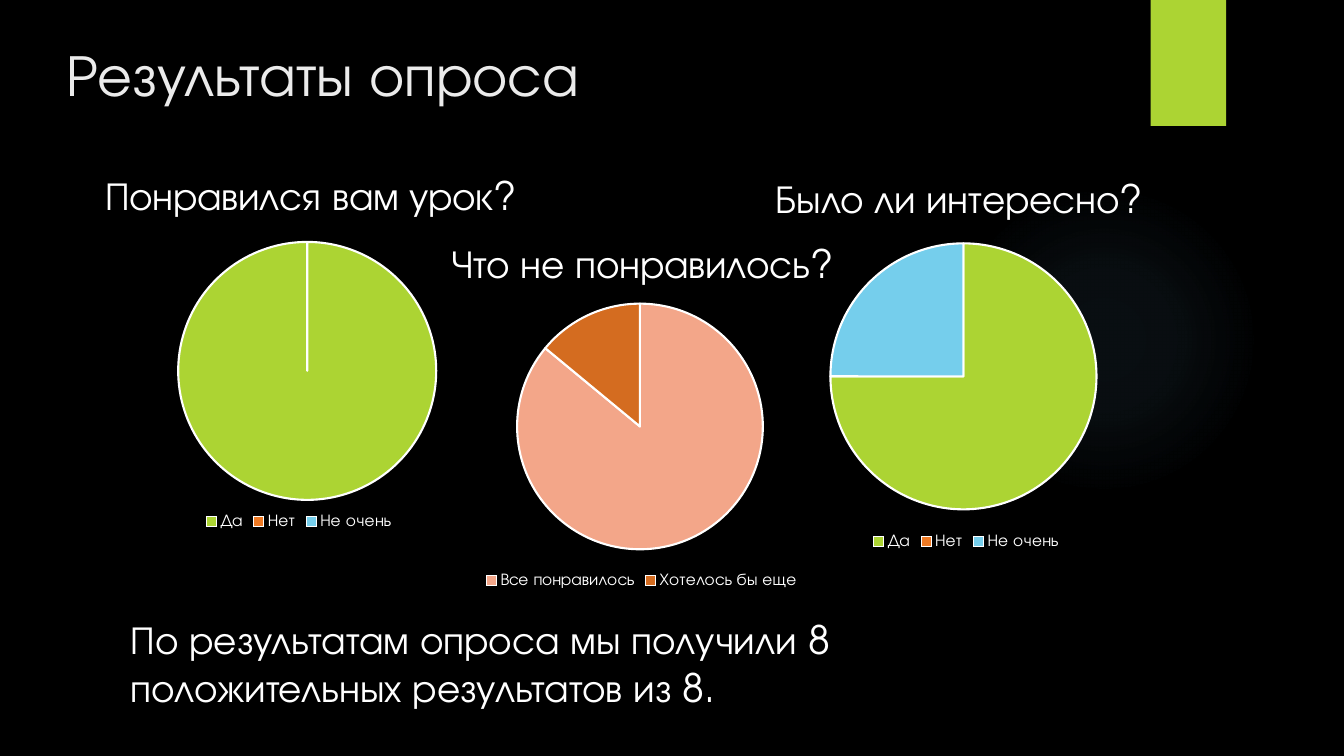
from dataclasses import dataclass

from lxml import etree
from pptx import Presentation
from pptx.chart.data import CategoryChartData
from pptx.dml.color import RGBColor
from pptx.enum.chart import XL_CHART_TYPE, XL_LEGEND_POSITION
from pptx.enum.shapes import MSO_SHAPE
from pptx.oxml import parse_xml
from pptx.oxml.ns import nsdecls, qn
from pptx.util import Inches, Pt

PIE = XL_CHART_TYPE.PIE
BOTTOM = XL_LEGEND_POSITION.BOTTOM
OVAL, RECTANGLE = MSO_SHAPE.OVAL, MSO_SHAPE.RECTANGLE

WIDTH, HEIGHT = Inches(13.33), Inches(7.5)
FONT = "TeX Gyre Adventor"
COLORS = {
    "background": "000000", "heading": "EBEBEB", "text": "FFFFFF",
    "glow": "7AC4F0", "lime": "ACD433", "orange": "EF7A24",
    "sky": "75CEEC", "peach": "F3A689", "rust": "D46C20",
}


@dataclass(frozen=True)
class Area:
    """Left, top, width and height in percent of the slide."""
    left: float
    top: float
    width: float
    height: float

    def emu(self) -> tuple[int, int, int, int]:
        return (int(WIDTH * self.left / 100), int(HEIGHT * self.top / 100),
                int(WIDTH * self.width / 100), int(HEIGHT * self.height / 100))


@dataclass(frozen=True)
class Question:
    wording: str
    area: Area
    wording_at: tuple[float, float]
    legend_at: tuple[float, float]
    pie_center: tuple[float, float]
    pie_height: float
    answers: dict[str, tuple[int, str]]


@dataclass(frozen=True)
class Passage:
    wording: str
    area: Area
    size: int
    color: str


QUESTIONS = [
    Question("Понравился вам урок?", Area(0, 20.67, 45.75, 51.47),
             (7.3, 22.6), (14.95, 67.46), (22.86, 49.07), 34.13,
             {"Да": (100, "lime"), "Нет": (0, "orange"), "Не очень": (0, "sky")}),
    Question("Было ли интересно?", Area(50.19, 20.8, 42.99, 52.53),
             (57.2, 23), (64.6, 70.1), (71.69, 49.8), 35.2,
             {"Да": (75, "lime"), "Нет": (0, "orange"), "Не очень": (25, "sky")}),
    Question("Что не понравилось?", Area(23.93, 30.67, 47.34, 48),
             (33.04, 31.6), (35.8, 75.26), (47.62, 56.42), 32.5,
             {"Все понравилось": (86, "peach"), "Хотелось бы еще": (14, "rust")}),
]
PASSAGES = [
    Passage("Результаты опроса", Area(4.2, 4.4, 77.2, 20.4), 42, "heading"),
    Passage("По результатам опроса мы получили 8 положительных результатов из 8.",
            Area(9, 80.8, 63.17, 13.87), 28, "text"),
]


def rgb(color: str) -> RGBColor:
    return RGBColor.from_string(COLORS[color])


def style(font, size: int, color: str) -> None:
    for attribute, value in {"name": FONT, "size": Pt(size), "bold": False}.items():
        setattr(font, attribute, value)
    font.color.rgb = rgb(color)


def add_block(slide, kind, area: Area, color: str):
    block = slide.shapes.add_shape(kind, *area.emu())
    block.shadow.inherit = False
    block.fill.solid()
    block.fill.fore_color.rgb = rgb(color)
    block.line.fill.background()
    return block


def add_glow(slide, area: Area) -> None:
    glow = add_block(slide, OVAL, area, "glow")
    stops = "".join(
        f'<a:gs pos="{place * 1000}"><a:srgbClr val="{COLORS["glow"]}">'
        f'<a:alpha val="{alpha * 1000}"/></a:srgbClr></a:gs>'
        for place, alpha in ((0, 7), (36, 6), (69, 0), (100, 0)))
    gradient = parse_xml(
        f'<a:gradFill {nsdecls("a")} rotWithShape="1"><a:gsLst>{stops}</a:gsLst>'
        '<a:path path="circle"><a:fillToRect l="50000" t="50000" r="50000" '
        'b="50000"/></a:path></a:gradFill>')
    properties = glow.element.spPr
    properties.replace(properties.find(qn("a:solidFill")), gradient)


def add_passage(slide, passage: Passage) -> None:
    frame = slide.shapes.add_textbox(*passage.area.emu()).text_frame
    frame.word_wrap = True
    run = frame.paragraphs[0].add_run()
    run.text = passage.wording
    style(run.font, passage.size, passage.color)


def place(part, index: int, settings: dict[str, object]) -> None:
    """Give a chart part a manual layout as its child number index."""
    for old in part.findall(qn("c:layout")):
        part.remove(old)
    layout = parse_xml(f'<c:layout {nsdecls("c")}><c:manualLayout/></c:layout>')
    for tag, value in settings.items():
        etree.SubElement(layout[0], qn(f"c:{tag}")).set("val", str(value))
    part.insert(index, layout)


def add_question(slide, question: Question) -> None:
    area = question.area
    data = CategoryChartData()
    data.categories = list(question.answers)
    data.add_series("Series 1", [share for share, _ in question.answers.values()])
    chart = slide.shapes.add_chart(PIE, *area.emu(), data).chart
    style(chart.font, 10, "text")

    # Question and legend
    chart.has_title = True
    heading = chart.chart_title.text_frame.paragraphs[0].add_run()
    heading.text = question.wording
    style(heading.font, 28, "text")
    chart.has_legend = True
    chart.legend.position = BOTTOM
    chart.legend.include_in_layout = False
    style(chart.legend.font, 12, "text")

    # Slices
    plot = chart.plots[0]
    plot.vary_by_categories = True
    for index, (_, color) in enumerate(question.answers.values()):
        slice_format = plot.series[0].points[index].format
        slice_format.fill.solid()
        slice_format.fill.fore_color.rgb = rgb(color)
        slice_format.line.color.rgb = rgb("text")
        slice_format.line.width = Pt(1.5)

    # Places inside the chart
    def edges(left: float, top: float) -> dict[str, object]:
        return {"xMode": "edge", "yMode": "edge",
                "x": round((left - area.left) / area.width, 4),
                "y": round((top - area.top) / area.height, 4)}

    pie_width = question.pie_height * HEIGHT / WIDTH
    center_x, center_y = question.pie_center
    pie_edges = edges(center_x - pie_width / 2, center_y - question.pie_height / 2)
    root = chart.element.find(qn("c:chart"))
    place(root.find(qn("c:title")), 1, edges(*question.wording_at))
    place(root.find(qn("c:legend")), 1, edges(*question.legend_at))
    place(root.find(qn("c:plotArea")), 0, {
        "layoutTarget": "inner", **pie_edges,
        "w": round(pie_width / area.width, 4),
        "h": round(question.pie_height / area.height, 4)})


def main() -> None:
    deck = Presentation()
    deck.slide_width, deck.slide_height = WIDTH, HEIGHT
    slide = deck.slides.add_slide(deck.slide_layouts[6])
    slide.background.fill.solid()
    slide.background.fill.fore_color.rgb = rgb("background")

    # Decoration
    add_glow(slide, Area(70.6, 24.4, 23.1, 41.07))
    add_block(slide, RECTANGLE, Area(85.62, 0, 5.62, 16.67), "lime")

    # Survey
    for question in QUESTIONS:
        add_question(slide, question)

    # Heading and conclusion
    for passage in PASSAGES:
        add_passage(slide, passage)

    deck.save("out.pptx")


if __name__ == "__main__":
    main()
